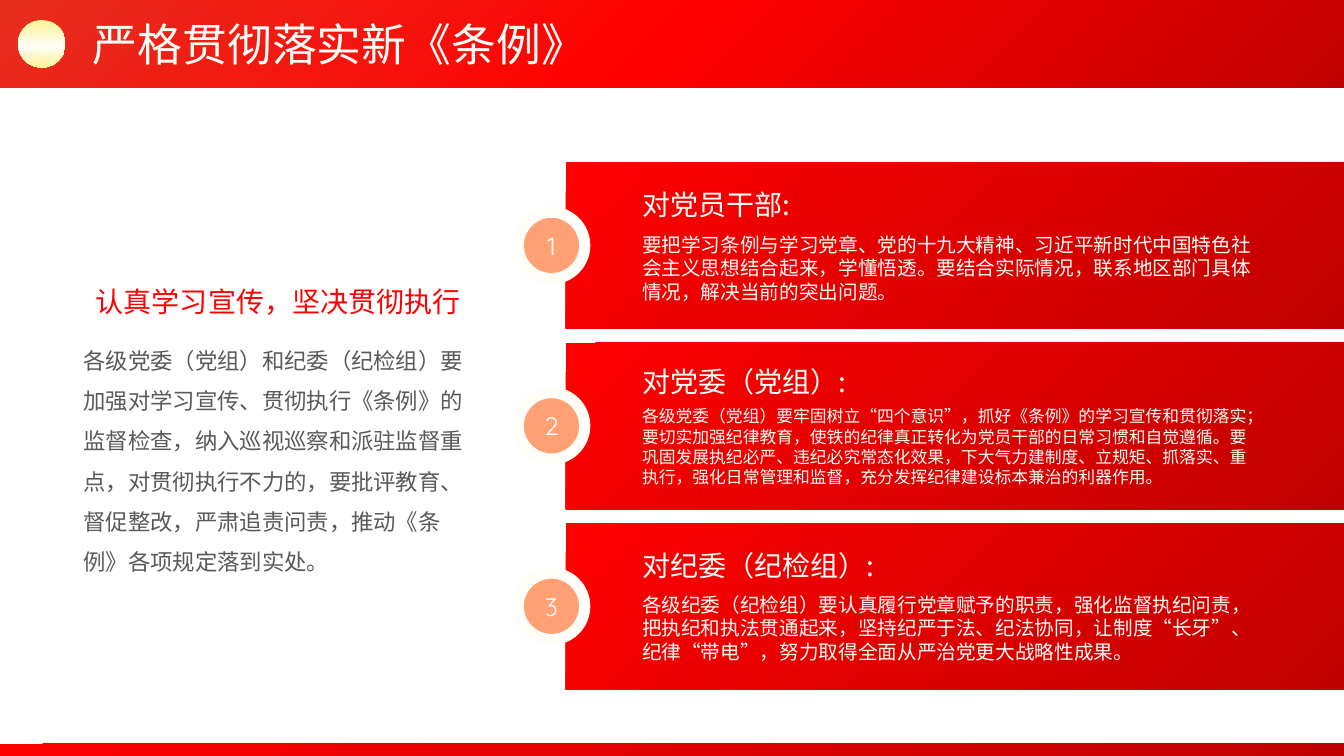
from copy import deepcopy

from lxml import etree
from pptx import Presentation
from pptx.dml.color import RGBColor
from pptx.enum import shapes, text
from pptx.oxml.ns import qn
from pptx.util import Inches, Pt

# Content
TITLE = "严格贯彻落实新《条例》"
SUMMARY_HEAD = "认真学习宣传，坚决贯彻执行"
SUMMARY = (
    "各级党委（党组）和纪委（纪检组）要加强对学习宣传、贯彻执行《条例》的监督检查，"
    "纳入巡视巡察和派驻监督重点，对贯彻执行不力的，要批评教育、督促整改，"
    "严肃追责问责，推动《条例》各项规定落到实处。"
)
# heading, its top, its width, body, its top, its height, body size
CARDS = [
    ("对党员干部:", 1.81, 1.7,
     "要把学习条例与学习党章、党的十九大精神、习近平新时代中国特色社会主义思想结合起来，"
     "学懂悟透。要结合实际情况，联系地区部门具体情况，解决当前的突出问题。",
     2.26, 0.81, 14),
    ("对党委（党组）:", 3.57, 2.26,
     "各级党委（党组）要牢固树立“四个意识”，抓好《条例》的学习宣传和贯彻落实；"
     "要切实加强纪律教育，使铁的纪律真正转化为党员干部的日常习惯和自觉遵循。"
     "要巩固发展执纪必严、违纪必究常态化效果，下大气力建制度、立规矩、抓落实、重执行，"
     "强化日常管理和监督，充分发挥纪律建设标本兼治的利器作用。",
     3.98, 0.91, 12),
    ("对纪委（纪检组）:", 5.39, 2.54,
     "各级纪委（纪检组）要认真履行党章赋予的职责，强化监督执纪问责，"
     "把执纪和执法贯通起来，坚持纪严于法、纪法协同，让制度“长牙”、纪律“带电”，"
     "努力取得全面从严治党更大战略性成果。",
     5.83, 0.81, 14),
]

# Style
COLORS = {"cream": "FFFDF8", "gray": "595959", "peach": "FFA075", "white": "FFFFFF"}
RED = [(0, "FF0000"), (1, "C00000")]
HEADER_RED = [(0, "E72E1E"), (0.5, "FF0000"), (1, "C00000")]
GOLD = [(0, "FDF394"), (0.55, "FFFDF8"), (1, "FDF394")]
HAN, DIGITS = "Noto Sans CJK SC", "Quicksand"
WIDTH, HEIGHT = 13.33, 7.5
CARD_LEFT, CARD_TOP, CARD_HEIGHT, CARD_STEP = 5.61, 1.61, 1.65, 1.79
BADGE_LEFT, BADGE = 5.14, 0.66
TEXT_LEFT, TEXT_WIDTH = 6.27, 6.33


def rgb(name):
    return RGBColor.from_string(COLORS[name])


def paint(fill, element, stops, angle):
    """Gradient fill; the angle runs clockwise."""
    fill.gradient()
    fill.gradient_angle = 360 - angle
    gs_list = element.xpath(".//a:gsLst")[0]
    while len(gs_list) < len(stops):
        gs_list.append(deepcopy(gs_list[0]))
    for stop, (position, color) in zip(fill.gradient_stops, stops):
        stop.position = position
        stop.color.rgb = RGBColor.from_string(color)


def add_shape(kind, left, top, width, height):
    sp = slide.shapes.add_shape(
        kind, Inches(left), Inches(top), Inches(width), Inches(height))
    sp.shadow.inherit = False
    sp.line.fill.background()
    return sp


def add_bar(left, top, width, height, stops=RED):
    sp = add_shape(shapes.MSO_SHAPE.RECTANGLE, left, top, width, height)
    paint(sp.fill, sp._element, stops, 45)


def write(sp, words, size, color=None, font=HAN, align=text.PP_ALIGN.LEFT):
    tf = sp.text_frame
    tf.text = words
    p = tf.paragraphs[0]
    p.alignment = align
    r = p.runs[0]
    r.font.size = Pt(size)
    r.font.name = font
    ea = etree.SubElement(r._r.get_or_add_rPr(), qn("a:ea"))
    ea.set("typeface", font)
    if color:
        r.font.fill.solid()
        r.font.fill.fore_color.rgb = rgb(color)
    return r


def add_text(left, top, width, height, words, size, color=None, wrap=True,
             align=text.PP_ALIGN.LEFT):
    box = slide.shapes.add_textbox(
        Inches(left), Inches(top), Inches(width), Inches(height))
    box.text_frame.word_wrap = wrap
    box.text_frame.auto_size = text.MSO_AUTO_SIZE.SHAPE_TO_FIT_TEXT
    return box, write(box, words, size, color, align=align)


prs = Presentation()
prs.slide_width, prs.slide_height = Inches(WIDTH), Inches(HEIGHT)
slide = prs.slides.add_slide(prs.slide_layouts[5])

# Footer strip, header band and emblem
add_bar(0, 7.38, WIDTH, 0.12)
add_bar(0, 0, WIDTH, 0.87, HEADER_RED)
emblem = add_shape(shapes.MSO_SHAPE.OVAL, 0.18, 0.2, 0.47, 0.47)
paint(emblem.fill, emblem._element, GOLD, 90)

# Title, moved in front of the header band
title = slide.shapes.title
slide.shapes._spTree.append(title._element)
title.left, title.top = Inches(0.82), Inches(0.12)
title.width, title.height = Inches(5.14), Inches(0.64)
title.text_frame.word_wrap = False
title.text_frame.auto_size = text.MSO_AUTO_SIZE.SHAPE_TO_FIT_TEXT
title.text_frame.vertical_anchor = text.MSO_ANCHOR.TOP
r = write(title, TITLE, 32)
paint(r.font.fill, r._r, GOLD, 90)

# Summary on the left
box, r = add_text(0.73, 3.26, 4.07, 2.48, SUMMARY, 16, "gray")
box.text_frame.paragraphs[0].line_spacing = 1.5
box, r = add_text(0.72, 2.77, 4.08, 0.44, SUMMARY_HEAD, 20,
                  align=text.PP_ALIGN.CENTER)
paint(r.font.fill, r._r, RED, 45)

# Numbered cards
for i, (head, head_top, head_width, body, body_top, body_height, size) in enumerate(CARDS):
    top = CARD_TOP + i * CARD_STEP
    add_bar(CARD_LEFT, top, WIDTH - CARD_LEFT, CARD_HEIGHT)

    badge = add_shape(shapes.MSO_SHAPE.OVAL, BADGE_LEFT,
                      top + (CARD_HEIGHT - BADGE) / 2, BADGE, BADGE)
    badge.fill.solid()
    badge.fill.fore_color.rgb = rgb("peach")
    badge.line.color.rgb = rgb("cream")
    badge.line.width = Pt(8)
    badge.text_frame.vertical_anchor = text.MSO_ANCHOR.MIDDLE
    write(badge, str(i + 1), 18, "white", DIGITS, text.PP_ALIGN.CENTER)

    add_text(TEXT_LEFT, head_top, head_width, 0.44, head, 20, "cream", wrap=False)
    add_text(TEXT_LEFT, body_top, TEXT_WIDTH, body_height, body, size, "cream")

prs.save("out.pptx")
